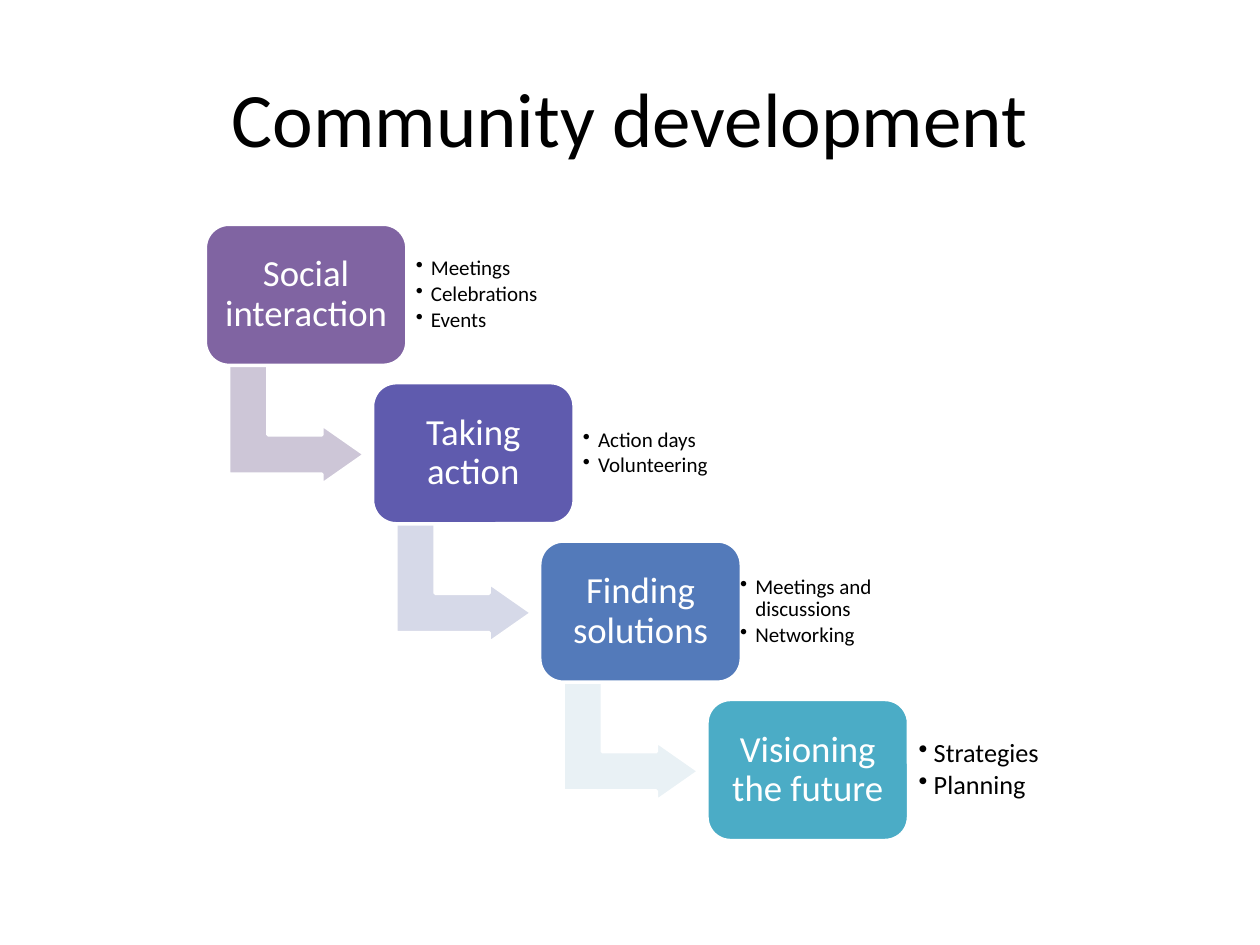
from dataclasses import dataclass

from lxml.etree import SubElement
from pptx import Presentation
from pptx.dml.color import RGBColor
from pptx.enum.shapes import MSO_SHAPE
from pptx.enum.text import MSO_ANCHOR, PP_ALIGN
from pptx.oxml.ns import qn
from pptx.shapes.autoshape import Shape
from pptx.shapes.group import GroupShape
from pptx.text.text import TextFrame, _Paragraph
from pptx.util import Inches, Pt

FONT = "Calibri"
BLACK = RGBColor(0x00, 0x00, 0x00)
WHITE = RGBColor(0xFF, 0xFF, 0xFF)
PURPLE = RGBColor(0x80, 0x64, 0xA2)
VIOLET = RGBColor(0x5F, 0x5B, 0xAE)
BLUE = RGBColor(0x53, 0x7A, 0xBA)
TEAL = RGBColor(0x4B, 0xAC, 0xC6)
PALE_PURPLE = RGBColor(0xCD, 0xC6, 0xD7)
PALE_VIOLET = RGBColor(0xD6, 0xD9, 0xE8)
PALE_TEAL = RGBColor(0xE9, 0xF1, 0xF5)

# Staircase grid, in inches: each step moves one column right and one row down.
LEFT, TOP = 1.63, 1.78
COLUMN, ROW = 1.327, 1.257
BOX_W, BOX_H = 1.6, 1.12
ARROW_W, ARROW_H = 0.95, 1.08
ARROW_DX, ARROW_DY = 0.25, 1.05
LIST_DY, LIST_W, LIST_H = 0.11, 1.16, 0.9
INDENT = 0.12


@dataclass(frozen=True)
class Step:
    label: str
    examples: tuple[str, ...]
    fill: RGBColor
    arrow: RGBColor | None = None
    list_size: int = 12
    list_margin: float = 0.07
    list_shift: float = 0
    list_w: float = LIST_W


STEPS = (
    Step("Social interaction", ("Meetings", "Celebrations", "Events"), PURPLE, PALE_PURPLE),
    Step("Taking action", ("Action days", "Volunteering"), VIOLET, PALE_VIOLET),
    Step("Finding solutions", ("Meetings and discussions", "Networking"), BLUE, PALE_TEAL,
         list_shift=-0.08, list_w=1.32),
    Step("Visioning the future", ("Strategies", "Planning"), TEAL,
         list_size=15, list_margin=0.08),
)


def set_font(p: _Paragraph, size: float, color: RGBColor) -> None:
    for r in p.runs:
        r.font.name, r.font.size = FONT, Pt(size)
        r.font.color.rgb = color


def set_frame(tf: TextFrame, margin: float) -> None:
    tf.word_wrap = True
    tf.vertical_anchor = MSO_ANCHOR.MIDDLE
    tf.margin_left = tf.margin_right = tf.margin_top = tf.margin_bottom = Inches(margin)


def add_filled(grp: GroupShape, kind: MSO_SHAPE, x: float, y: float, w: float, h: float,
               fill: RGBColor, adjustments: tuple[float, ...]) -> Shape:
    sp = grp.shapes.add_shape(kind, Inches(x), Inches(y), Inches(w), Inches(h))
    sp.shadow.inherit = False
    for i, value in enumerate(adjustments):
        sp.adjustments[i] = value
    sp.fill.solid()
    sp.fill.fore_color.rgb = fill
    sp.line.color.rgb = WHITE
    sp.line.width = Pt(2)
    return sp


def add_bullet(p: _Paragraph) -> None:
    pPr = p._p.get_or_add_pPr()
    pPr.set("marL", str(Inches(INDENT)))
    pPr.set("indent", str(-Inches(INDENT)))
    SubElement(pPr, qn("a:buChar")).set("char", "•")


def add_examples(grp: GroupShape, step: Step, x: float, y: float) -> None:
    sp = grp.shapes.add_textbox(Inches(x), Inches(y), Inches(step.list_w), Inches(LIST_H))
    tf = sp.text_frame
    set_frame(tf, step.list_margin)
    tf.text = "\n".join(step.examples)
    for p in tf.paragraphs:
        p.level = 1
        p.line_spacing = 0.9
        p.space_after = Pt(0.15 * step.list_size)
        add_bullet(p)
        set_font(p, step.list_size, BLACK)


def add_step(grp: GroupShape, step: Step, index: int) -> None:
    x, y = LEFT + index * COLUMN, TOP + index * ROW
    if step.arrow is not None:
        arrow = add_filled(grp, MSO_SHAPE.BENT_UP_ARROW, x + ARROW_DX, y + ARROW_DY,
                           ARROW_W, ARROW_H, step.arrow, (0.328, 0.25, 0.358))
        arrow.rotation = 90
    box = add_filled(grp, MSO_SHAPE.ROUNDED_RECTANGLE, x, y, BOX_W, BOX_H,
                     step.fill, (0.167,))
    tf = box.text_frame
    set_frame(tf, 0.09)
    tf.text = step.label
    p = tf.paragraphs[0]
    p.alignment = PP_ALIGN.CENTER
    p.line_spacing = 0.9
    set_font(p, 21, WHITE)
    add_examples(grp, step, x + BOX_W + step.list_shift, y + LIST_DY)


def main() -> None:
    prs = Presentation()
    prs.slide_width, prs.slide_height = Inches(10), Inches(7.5)
    s = prs.slides.add_slide(prs.slide_layouts[5])

    title = s.shapes.title
    title.left, title.top = Inches(0.5), Inches(0.3)
    title.width, title.height = Inches(9), Inches(1.25)
    tf = title.text_frame
    tf.text = "Community development"
    tf.vertical_anchor = MSO_ANCHOR.MIDDLE
    tf.paragraphs[0].alignment = PP_ALIGN.CENTER
    set_font(tf.paragraphs[0], 44, BLACK)

    grp = s.shapes.add_group_shape()
    for index, step in enumerate(STEPS):
        add_step(grp, step, index)
    prs.save("out.pptx")


if __name__ == "__main__":
    main()
